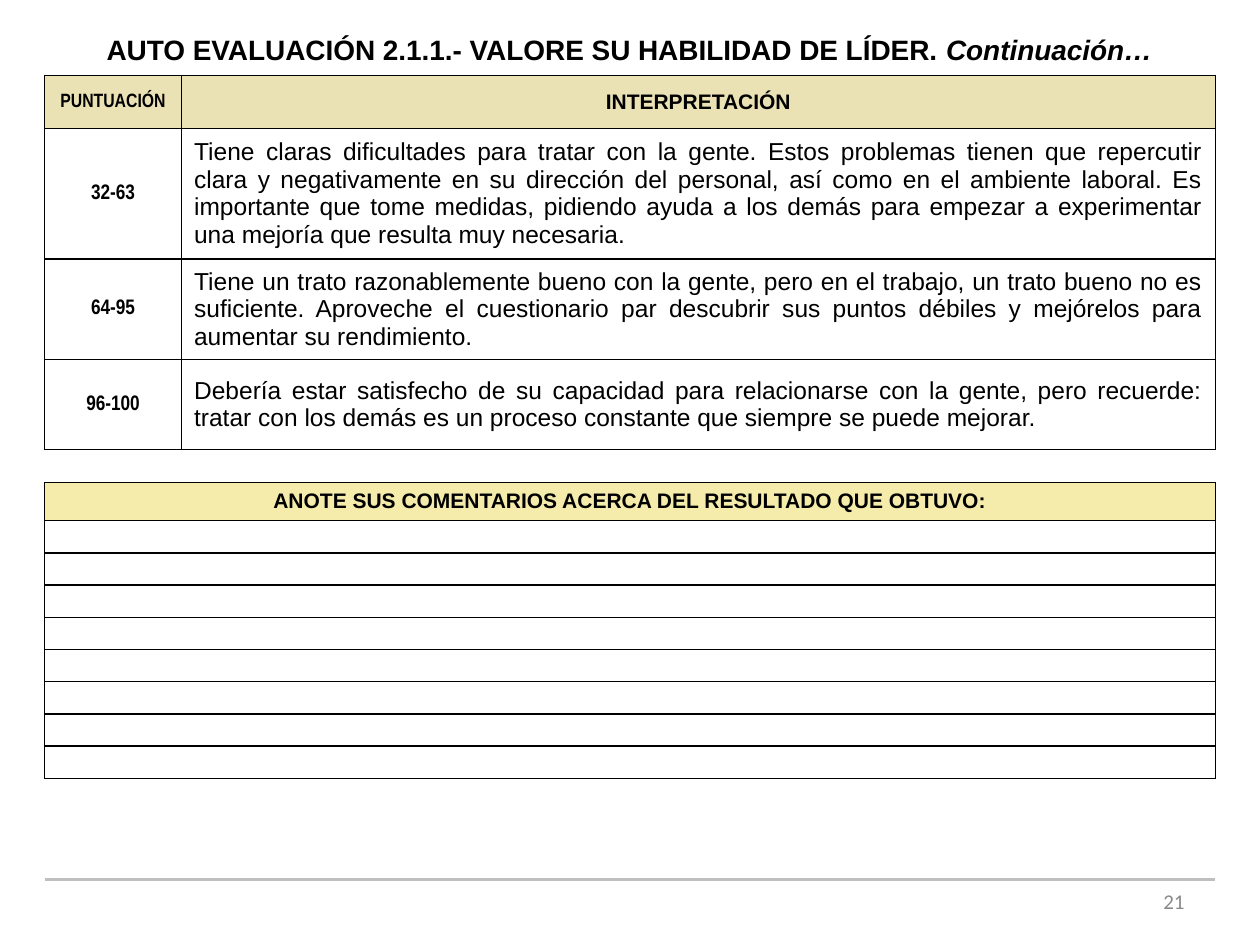
from dataclasses import dataclass

from lxml import etree
from pptx import Presentation
from pptx.dml.color import RGBColor
from pptx.enum.shapes import MSO_CONNECTOR
from pptx.enum.text import MSO_ANCHOR, MSO_AUTO_SIZE, PP_ALIGN
from pptx.oxml.ns import qn
from pptx.util import Cm, Pt

CENTER, RIGHT, JUSTIFY = PP_ALIGN.CENTER, PP_ALIGN.RIGHT, PP_ALIGN.JUSTIFY
MIDDLE = MSO_ANCHOR.MIDDLE
STRAIGHT = MSO_CONNECTOR.STRAIGHT
NO_AUTOFIT = MSO_AUTO_SIZE.NONE


@dataclass(frozen=True)
class Theme:
    font: str = "Arial"
    narrow: str = "Arial Narrow"
    number_font: str = "Calibri"
    ink: str = "000000"
    paper: str = "FFFFFF"
    score_head: str = "EAE2B4"
    comment_head: str = "F5ECAB"
    rule: str = "BFBFBF"
    number: str = "898989"
    title_size: int = 16
    body_size: int = 14
    label_size: int = 12
    small_size: int = 11
    blank_size: int = 10


T = Theme()

SCORES = [
    ("32-63", "Tiene claras dificultades para tratar con la gente. Estos problemas tienen que "
              "repercutir clara y negativamente en su dirección del personal, así como en el "
              "ambiente laboral. Es importante que tome medidas, pidiendo ayuda a los demás para "
              "empezar a experimentar una mejoría que resulta muy necesaria."),
    ("64-95", "Tiene un trato razonablemente bueno con la gente, pero en el trabajo, un trato "
              "bueno no es suficiente. Aproveche el cuestionario par descubrir sus puntos débiles "
              "y mejórelos para aumentar su rendimiento."),
    ("96-100", "Debería estar satisfecho de su capacidad para relacionarse con la gente, pero "
               "recuerde: tratar con los demás es un proceso constante que siempre se puede "
               "mejorar."),
]


def add_text(p, text, font=T.font, size=T.label_size, color=T.ink,
             bold=False, italic=False, align=CENTER):
    p.alignment = align
    r = p.add_run()
    r.text = text
    r.font.name, r.font.size = font, Pt(size)
    r.font.bold, r.font.italic = bold, italic
    r.font.color.rgb = RGBColor.from_string(color)


def style_cell(cell, fill=None):
    """Fill the cell and rule its four sides."""
    cell.vertical_anchor = MIDDLE
    tcPr = cell._tc.get_or_add_tcPr()
    for side in ("a:lnL", "a:lnR", "a:lnT", "a:lnB"):
        ln = etree.SubElement(tcPr, qn(side), w=str(Pt(1)))
        solid = etree.SubElement(ln, qn("a:solidFill"))
        etree.SubElement(solid, qn("a:srgbClr"), val=T.ink)
    if fill:
        cell.fill.solid()
        cell.fill.fore_color.rgb = RGBColor.from_string(fill)
    else:
        cell.fill.background()


def new_table(s, left, top, widths, heights):
    frame = s.shapes.add_table(len(heights), len(widths), Cm(left), Cm(top),
                               Cm(sum(widths)), Cm(sum(heights)))
    table = frame.table
    table.first_row = table.horz_banding = False
    for column, width in zip(table.columns, widths):
        column.width = Cm(width)
    for row, height in zip(table.rows, heights):
        row.height = Cm(height)
    return table


def add_title(s, left, top, width, height):
    title = s.shapes.title
    title.left, title.top, title.width, title.height = map(Cm, (left, top, width, height))
    tf = title.text_frame
    tf.auto_size, tf.vertical_anchor = NO_AUTOFIT, MIDDLE
    p = tf.paragraphs[0]
    p.space_before = Pt(0)
    add_text(p, "AUTO EVALUACIÓN 2.1.1.- VALORE SU HABILIDAD DE LÍDER. ",
             size=T.title_size, bold=True)
    add_text(p, "Continuación…", size=T.title_size, bold=True, italic=True)


def add_score_table(s, left, top, width):
    score_width = 2.76
    table = new_table(s, left, top, [score_width, width - score_width],
                      [1.07, 2.48, 1.92, 1.81])
    # Header
    heads = (("PUNTUACIÓN", T.narrow, T.small_size), ("INTERPRETACIÓN", T.font, T.label_size))
    for col, (text, font, size) in enumerate(heads):
        cell = table.cell(0, col)
        style_cell(cell, T.score_head)
        add_text(cell.text_frame.paragraphs[0], text, font=font, size=size, bold=True)
    # Score ranges and their meaning
    for row, (score, meaning) in enumerate(SCORES, 1):
        label, body = table.cell(row, 0), table.cell(row, 1)
        style_cell(label, T.paper)
        style_cell(body)
        add_text(label.text_frame.paragraphs[0], score, font=T.narrow, bold=True)
        add_text(body.text_frame.paragraphs[0], meaning, size=T.body_size, align=JUSTIFY)


def add_comment_table(s, left, top, width, lines=8):
    table = new_table(s, left, top, [width], [0.72] + [0.65] * lines)
    head = table.cell(0, 0)
    style_cell(head, T.comment_head)
    add_text(head.text_frame.paragraphs[0],
             "ANOTE SUS COMENTARIOS ACERCA DEL RESULTADO QUE OBTUVO:", bold=True)
    # Blank writing lines, with a small type size so the rows stay low
    for row in range(1, lines + 1):
        cell = table.cell(row, 0)
        style_cell(cell, T.paper)
        cell.margin_top = cell.margin_bottom = 0
        etree.SubElement(cell.text_frame.paragraphs[0]._p, qn("a:endParaRPr"),
                         sz=str(T.blank_size * 100))


def add_footer(s, left, top, width):
    line = s.shapes.add_connector(STRAIGHT, Cm(left), Cm(top), Cm(left + width), Cm(top))
    line.line.color.rgb = RGBColor.from_string(T.rule)
    line.line.width = Pt(2)
    etree.SubElement(line._element.spPr, qn("a:effectLst"))
    # Page number
    box_width = 5.92
    tb = s.shapes.add_textbox(Cm(left + width - box_width - 0.37), Cm(top - 0.08),
                              Cm(box_width), Cm(1.02))
    tf = tb.text_frame
    tf.word_wrap, tf.vertical_anchor = True, MIDDLE
    add_text(tf.paragraphs[0], "21", font=T.number_font, color=T.number, align=RIGHT)


def main():
    prs = Presentation()
    prs.slide_width, prs.slide_height = Cm(25.4), Cm(19.05)
    s = prs.slides.add_slide(prs.slide_layouts[5])
    left, width = 0.9, 23.6
    add_footer(s, left, 17.73, width)
    add_score_table(s, left, 1.52, width)
    add_comment_table(s, left, 9.73, width)
    add_title(s, 0.69, 0.53, 24, 0.94)
    prs.save("out.pptx")


if __name__ == "__main__":
    main()
